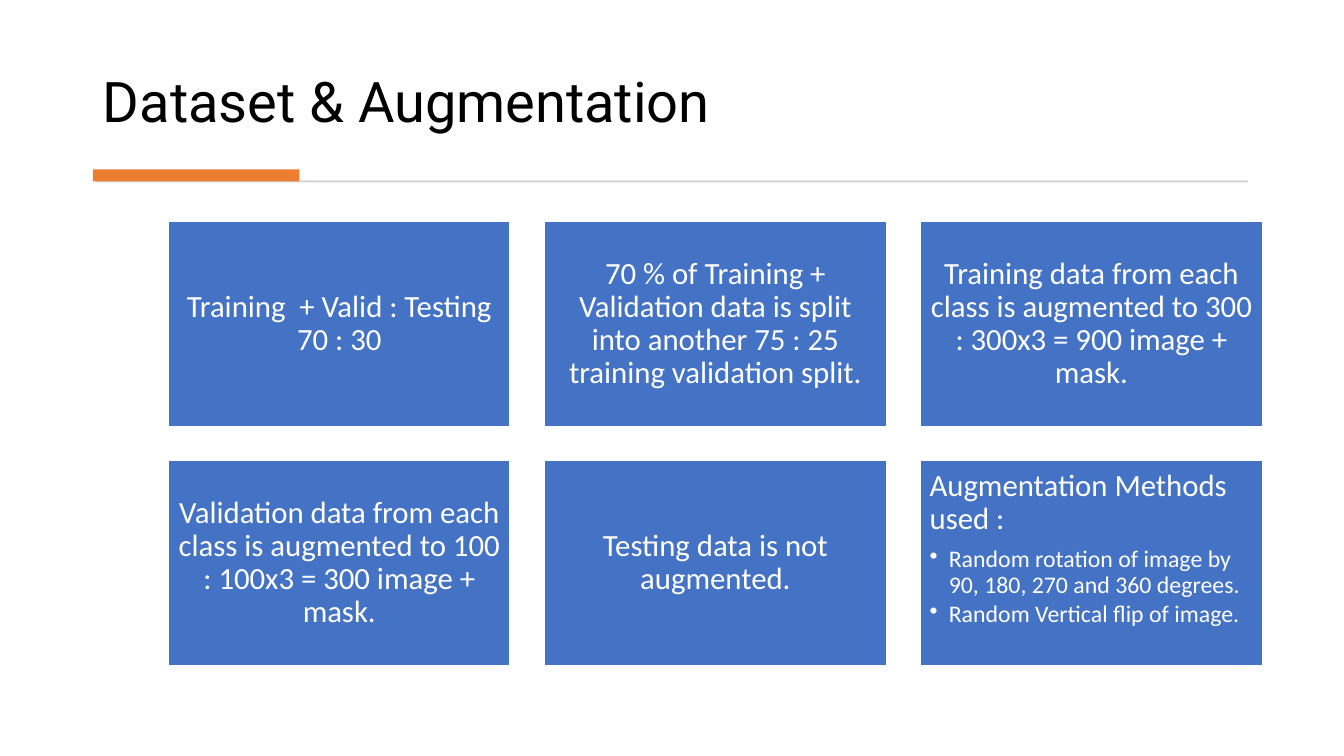
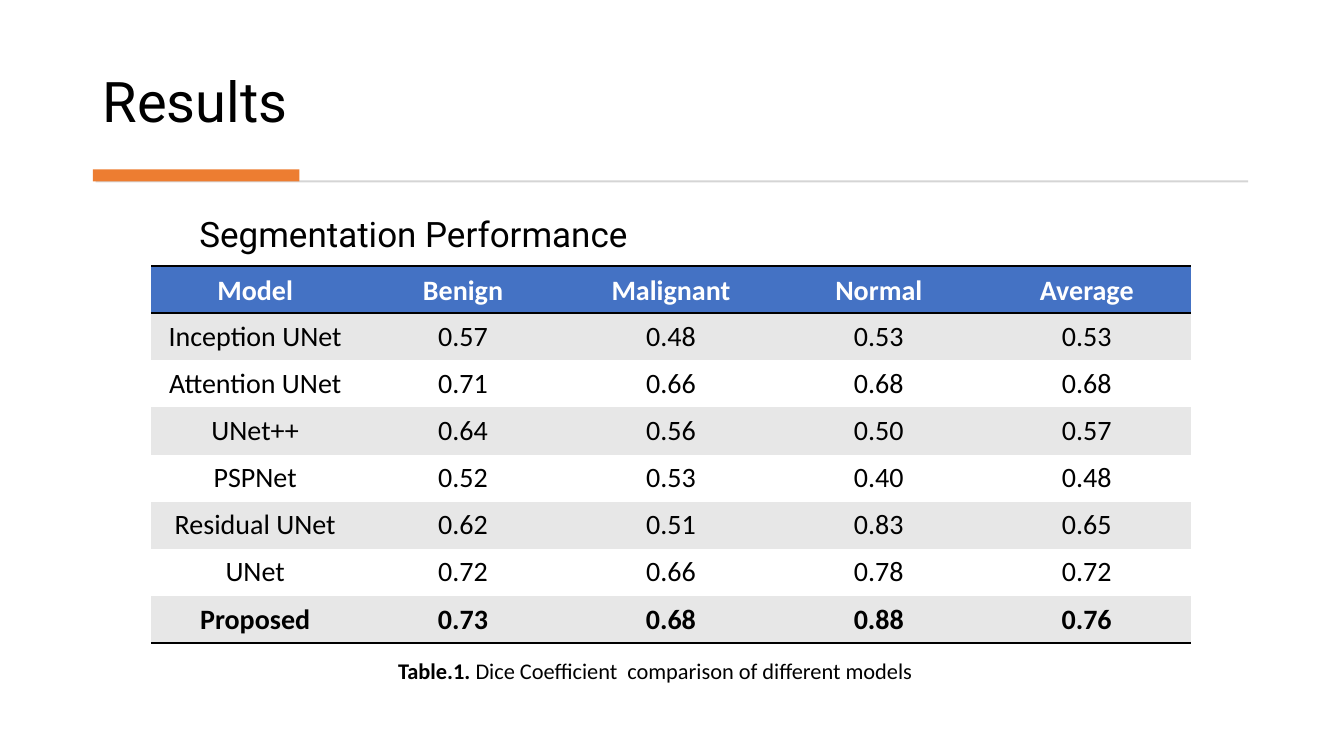
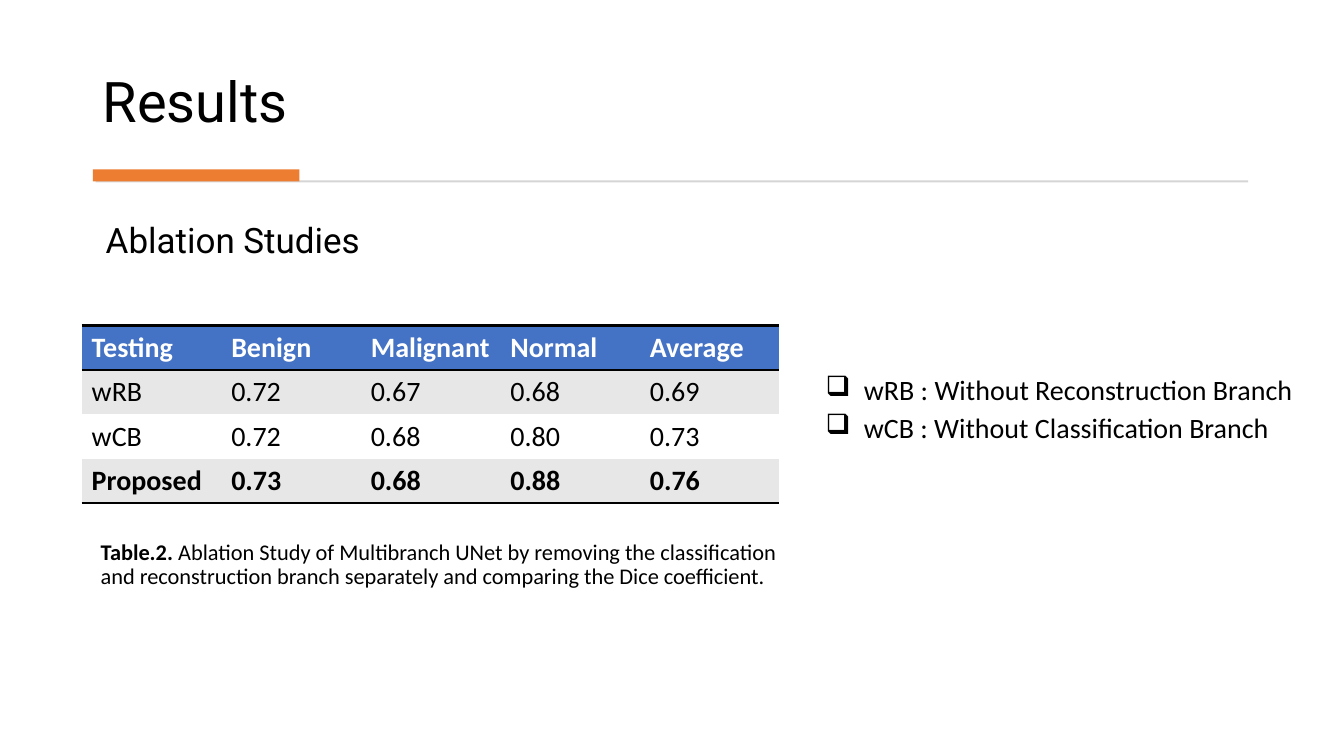
"""Build three slides on dataset augmentation and segmentation results."""
from lxml.etree import SubElement
from pptx import Presentation
from pptx.dml.color import RGBColor
from pptx.enum.shapes import MSO_SHAPE as Preset
from pptx.enum.text import MSO_ANCHOR as Anchor, MSO_AUTO_SIZE as AutoSize, PP_ALIGN as Align
from pptx.oxml import parse_xml
from pptx.oxml.ns import nsdecls, qn
from pptx.util import Inches, Pt

BLACK = RGBColor(0x00, 0x00, 0x00)
WHITE = RGBColor(0xFF, 0xFF, 0xFF)
BLUE = RGBColor(0x44, 0x72, 0xC4)
ORANGE = RGBColor(0xED, 0x7D, 0x31)
RULE_GRAY = RGBColor(0xD5, 0xD5, 0xD5)
BAND_GRAY = RGBColor(0xE7, 0xE7, 0xE7)
NO_GRID_STYLE = "{2D5ABB26-0587-4C30-8999-92F81FD0307C}"


def write(para, spans, size, color=BLACK, font="Calibri", align=Align.LEFT,
          spacing=0.9, after=0, bullet=None, indent=0):
    """Fill a paragraph with (text, bold) spans and format it."""
    para.alignment = align
    para.line_spacing = spacing
    para.space_before = Pt(0)
    para.space_after = Pt(after)
    if bullet:
        properties = para._p.get_or_add_pPr()
        properties.set("marL", str(Inches(indent)))
        properties.set("indent", str(-Inches(indent)))
        SubElement(properties, qn("a:buChar")).set("char", bullet)
    for text, bold in spans:
        span = para.add_run()
        span.text = text
        span.font.name = font
        span.font.size = Pt(size)
        span.font.bold = bold
        span.font.color.rgb = color


def add_rectangle(slide, left, top, width, height, color):
    """Add a plain filled rectangle."""
    box = slide.shapes.add_shape(
        Preset.RECTANGLE, Inches(left), Inches(top), Inches(width), Inches(height))
    box.shadow.inherit = False
    box.fill.solid()
    box.fill.fore_color.rgb = color
    box.line.fill.background()
    return box


deck = Presentation()
deck.slide_width = Inches(13.33)
deck.slide_height = Inches(7.5)

pages = []
for heading in ["Dataset & Augmentation", "Results", "Results"]:
    page = deck.slides.add_slide(deck.slide_layouts[5])
    title = page.shapes.title
    title.left, title.top = Inches(0.92), Inches(0.28)
    title.width, title.height = Inches(11.49), Inches(1.11)
    title.text_frame.auto_size = AutoSize.NONE
    title.text_frame.vertical_anchor = Anchor.BOTTOM
    write(title.text_frame.paragraphs[0], [(heading, False)], 40, font="Roboto")
    add_rectangle(page, 0.95, 1.79, 11.43, 0.02, RULE_GRAY)
    add_rectangle(page, 0.92, 1.68, 2.05, 0.12, ORANGE)
    pages.append(page)
dataset_page, performance_page, ablation_page = pages

CARD_WIDTH, CARD_HEIGHT, CARD_GAP = 3.39, 2.03, 0.34
cards = [
    "Training  + Valid : Testing 70 : 30",
    "70 % of Training + Validation data is split into another 75 : 25 training validation split.",
    "Training data from each class is augmented to 300 : 300x3 = 900 image + mask.",
    "Validation data from each class is augmented to 100 : 100x3 = 300 image + mask.",
    "Testing data is not augmented.",
    "Augmentation Methods used :",
]
methods = [
    "Random rotation of image by 90, 180, 270 and 360 degrees.",
    "Random Vertical flip of image.",
]
for index, text in enumerate(cards):
    row, column = divmod(index, 3)
    card = add_rectangle(
        dataset_page, 1.67 + column * (CARD_WIDTH + CARD_GAP),
        2.2 + row * (CARD_HEIGHT + CARD_GAP), CARD_WIDTH, CARD_HEIGHT, BLUE)
    card.line.color.rgb = WHITE
    card.line.width = Pt(1)
    frame = card.text_frame
    frame.word_wrap = True
    frame.margin_left = frame.margin_right = Inches(0.09)
    frame.margin_top = frame.margin_bottom = Inches(0.09)
    is_list = index == len(cards) - 1
    frame.vertical_anchor = Anchor.TOP if is_list else Anchor.MIDDLE
    write(frame.paragraphs[0], [(text, False)], 22, WHITE, after=7.7,
          align=Align.LEFT if is_list else Align.CENTER)
for method in methods:
    write(frame.add_paragraph(), [(method, False)], 17, WHITE, after=2.6,
          bullet="•", indent=0.19)

performance_rows = [
    ["Model", "Benign", "Malignant", "Normal", "Average"],
    ["Inception UNet", "0.57", "0.48", "0.53", "0.53"],
    ["Attention UNet", "0.71", "0.66", "0.68", "0.68"],
    ["UNet++", "0.64", "0.56", "0.50", "0.57"],
    ["PSPNet", "0.52", "0.53", "0.40", "0.48"],
    ["Residual UNet", "0.62", "0.51", "0.83", "0.65"],
    ["UNet", "0.72", "0.66", "0.78", "0.72"],
    ["Proposed", "0.73", "0.68", "0.88", "0.76"],
]
ablation_rows = [
    ["Testing", "Benign", "Malignant", "Normal", "Average"],
    ["wRB", "0.72", "0.67", "0.68", "0.69"],
    ["wCB", "0.72", "0.68", "0.80", "0.73"],
    ["Proposed", "0.73", "0.68", "0.88", "0.76"],
]
tables = [
    (performance_page, performance_rows, 1.5, 2.64, 10.31, 3.74, Align.CENTER),
    (ablation_page, ablation_rows, 0.81, 3.23, 6.92, 1.73, Align.LEFT),
]
for page, rows, left, top, width, height, align in tables:
    table = page.shapes.add_table(
        len(rows), len(rows[0]), Inches(left), Inches(top), Inches(width), Inches(height)).table
    table._tbl.tblPr.find(qn("a:tableStyleId")).text = NO_GRID_STYLE
    table.horz_banding = False
    last = len(rows) - 1
    for row, values in enumerate(rows):
        is_header = row == 0
        fill = BLUE if is_header else BAND_GRAY if row % 2 else WHITE
        borders = ["lnB", "lnT"] if is_header else ["lnB"] if row == last else []
        for column, value in enumerate(values):
            cell = table.cell(row, column)
            cell.vertical_anchor = Anchor.BOTTOM if is_header else Anchor.MIDDLE
            cell.fill.solid()
            cell.fill.fore_color.rgb = fill
            write(cell.text_frame.paragraphs[0], [(value, row in (0, last))], 20,
                  WHITE if is_header else BLACK, align=align, spacing=1.0)
            for side in borders:
                cell._tc.get_or_add_tcPr().insert(0, parse_xml(
                    f'<a:{side} {nsdecls("a")} w="{Pt(2)}"><a:solidFill>'
                    f'<a:srgbClr val="{BLACK}"/></a:solidFill></a:{side}>'))

notes = [
    (performance_page, 1.88, 2.11, 7.93, 0.48, 25, "Roboto", None,
     [[("Segmentation Performance", False)]]),
    (performance_page, 3.85, 6.5, 5.33, 0.34, 16, "Calibri", None,
     [[("Table.1.", True), (" Dice Coefficient  comparison of different models", False)]]),
    (ablation_page, 0.95, 2.17, 6.99, 0.48, 25, "Roboto", None,
     [[("Ablation Studies", False)]]),
    (ablation_page, 8.09, 3.68, 5.03, 0.82, 20, "Calibri", "❑",
     [[("wRB : Without Reconstruction Branch", False)],
      [("wCB : Without Classification Branch", False)]]),
    (ablation_page, 0.9, 5.32, 6.99, 0.59, 16, "Calibri", None,
     [[("Table.2.", True),
       (" Ablation Study of Multibranch UNet by removing the classification and "
        "reconstruction branch separately and comparing the Dice coefficient.", False)]]),
]
for page, left, top, width, height, size, font, bullet, lines in notes:
    box = page.shapes.add_textbox(Inches(left), Inches(top), Inches(width), Inches(height))
    frame = box.text_frame
    frame.word_wrap = True
    for index, spans in enumerate(lines):
        para = frame.add_paragraph() if index else frame.paragraphs[0]
        write(para, spans, size, font=font, after=6, bullet=bullet, indent=0.38)

deck.save("out.pptx")
